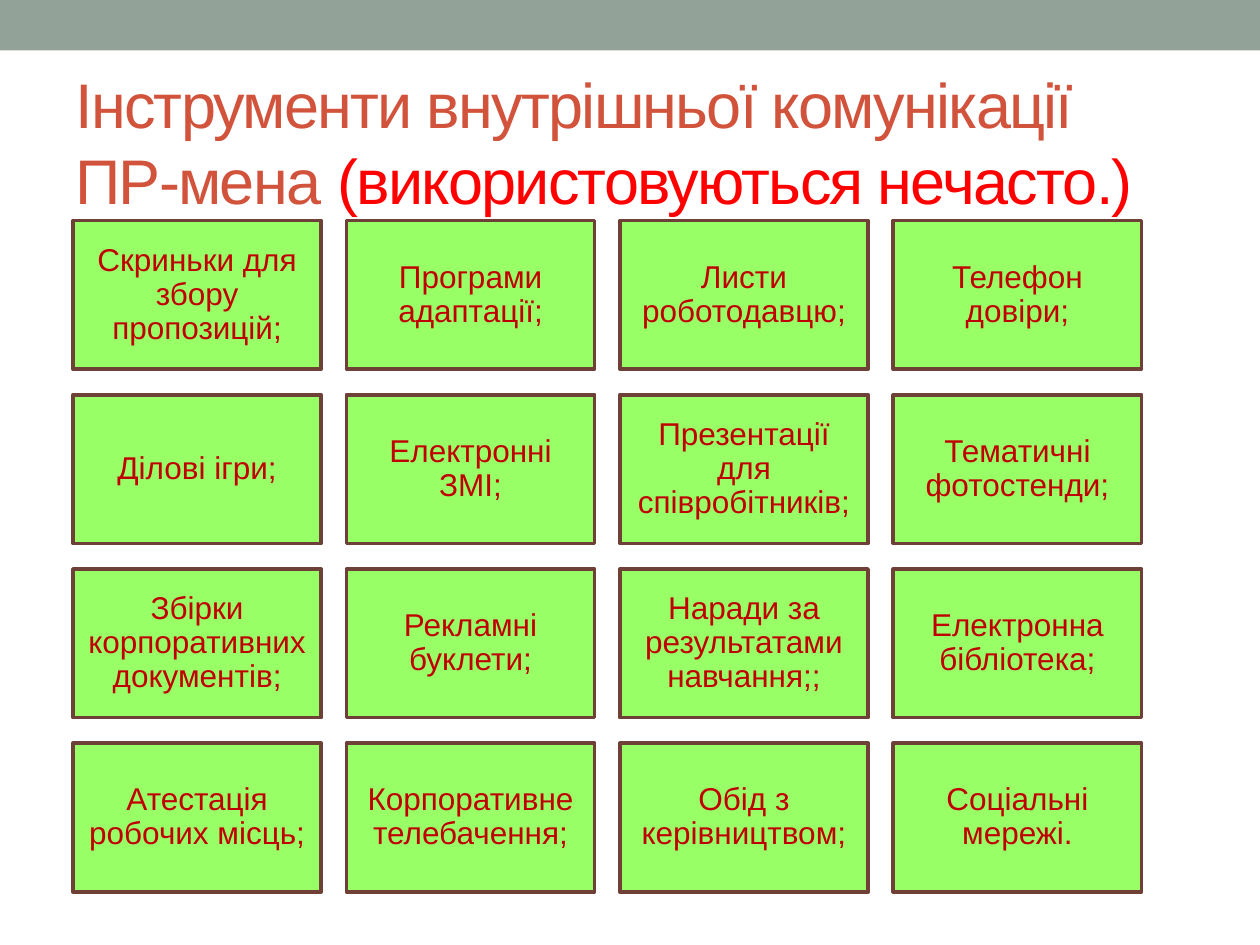
import pptx
import pptx.dml.color
import pptx.enum.shapes
import pptx.enum.text
import pptx.util

Inches = pptx.util.Inches
Pt = pptx.util.Pt

WIDTH, HEIGHT = 10, 7.5
FONT = "Arial"

# Grid of cards: origin, card size and step between cards, in inches
GRID_LEFT, GRID_TOP = 0.58, 1.75
CARD_WIDTH, CARD_HEIGHT = 1.97, 1.18
STEP_X, STEP_Y = 2.17, 1.383

TOOLS = [
    ["Скриньки для збору пропозицій;", "Програми адаптації;",
     "Листи роботодавцю;", "Телефон довіри;"],
    ["Ділові ігри;", "Електронні ЗМІ;",
     "Презентації для співробітників;", "Тематичні фотостенди;"],
    ["Збірки корпоративних документів;", "Рекламні буклети;",
     "Наради за результатами навчання;;", "Електронна бібліотека;"],
    ["Атестація робочих місць;", "Корпоративне телебачення;",
     "Обід з керівництвом;", "Соціальні мережі."],
]


def color(value):
    return pptx.dml.color.RGBColor.from_string(value)


def add_rectangle(page, left, top, width, height, fill, line=None):
    box = page.shapes.add_shape(
        pptx.enum.shapes.MSO_SHAPE.RECTANGLE,
        Inches(left), Inches(top), Inches(width), Inches(height))
    box.shadow.inherit = False
    box.fill.solid()
    box.fill.fore_color.rgb = color(fill)
    if line:
        box.line.color.rgb = color(line)
        box.line.width = Pt(2.08)
    else:
        box.line.fill.background()
    return box


def add_title(page, spans):
    box = page.shapes.add_textbox(
        Inches(0.5), Inches(0.58), Inches(9), Inches(1.08))
    frame = box.text_frame
    frame.word_wrap = True
    frame.vertical_anchor = pptx.enum.text.MSO_ANCHOR.MIDDLE
    para = frame.paragraphs[0]
    para.font.name = FONT
    para.font.size = Pt(36)
    for text, value in spans:
        span = para.add_run()
        span.text = text
        span.font.color.rgb = color(value)
        # Tighten the letters by one point
        span.font._element.set("spc", "-100")


def add_card(page, column, row, text):
    box = add_rectangle(
        page, GRID_LEFT + column * STEP_X, GRID_TOP + row * STEP_Y,
        CARD_WIDTH, CARD_HEIGHT, "99FF66", "6E4037")
    frame = box.text_frame
    frame.word_wrap = True
    frame.vertical_anchor = pptx.enum.text.MSO_ANCHOR.MIDDLE
    frame.margin_left = frame.margin_right = Inches(0.07)
    frame.margin_top = frame.margin_bottom = Inches(0.07)
    para = frame.paragraphs[0]
    para.text = text
    para.alignment = pptx.enum.text.PP_ALIGN.CENTER
    para.line_spacing = 0.9
    para.font.name = FONT
    para.font.size = Pt(18)
    para.font.color.rgb = color("C00000")


def main():
    deck = pptx.Presentation()
    deck.slide_width = Inches(WIDTH)
    deck.slide_height = Inches(HEIGHT)
    page = deck.slides.add_slide(deck.slide_layouts[6])

    # Band and title
    add_rectangle(page, 0, 0, WIDTH, 0.4, "93A299")
    add_title(page, [
        ("Інструменти внутрішньої комунікації ПР-мена ", "D2533C"),
        ("(використовуються нечасто.)", "FF0000"),
    ])

    # Cards
    for row, texts in enumerate(TOOLS):
        for column, text in enumerate(texts):
            add_card(page, column, row, text)

    deck.save("out.pptx")


if __name__ == "__main__":
    main()
